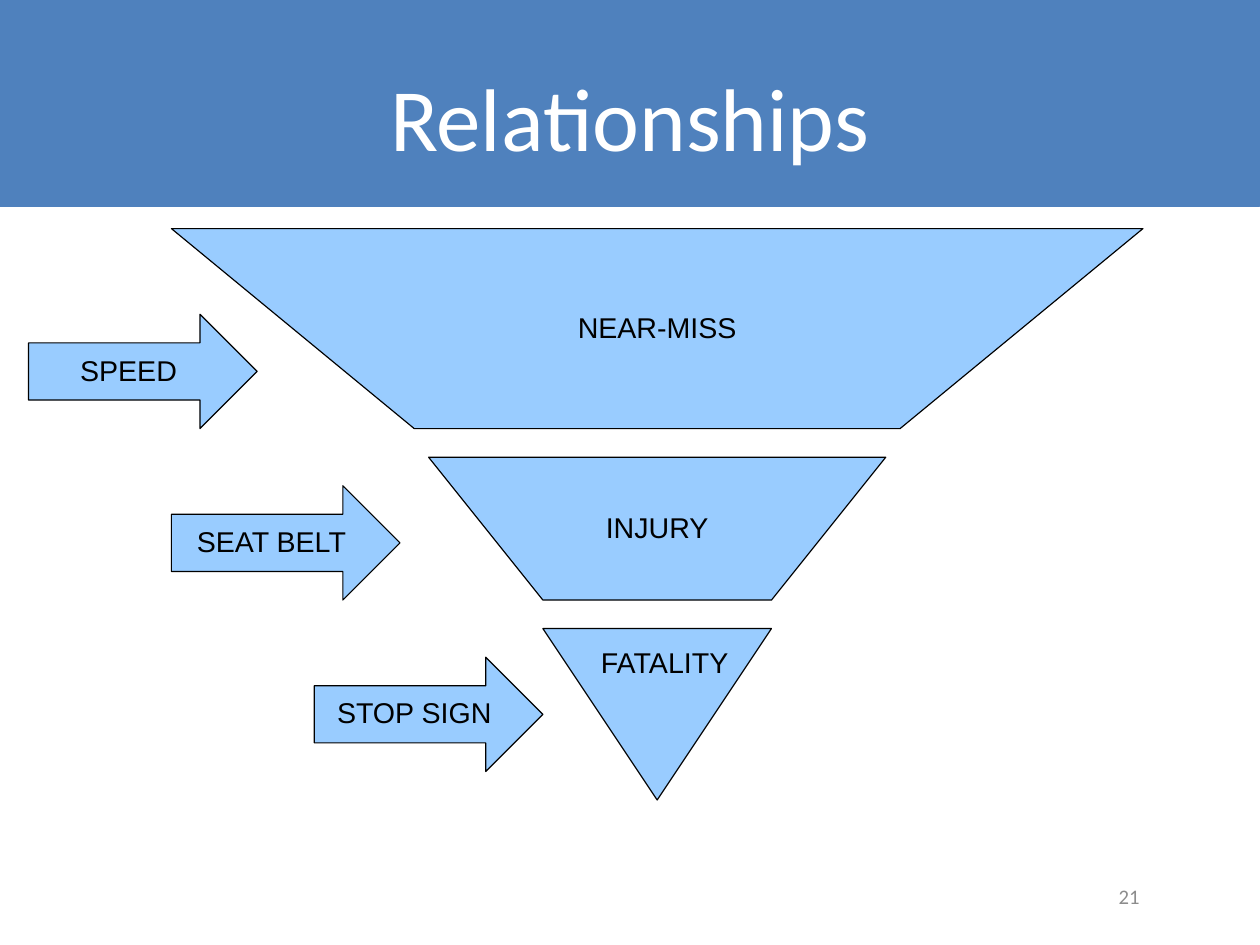
from pptx import Presentation
from pptx.dml.color import RGBColor
from pptx.enum.shapes import MSO_SHAPE
from pptx.enum.text import MSO_ANCHOR, MSO_AUTO_SIZE, PP_ALIGN
from pptx.util import Cm, Inches, Pt

BANNER_BLUE = RGBColor(0x4F, 0x81, 0xBD)
SKY_BLUE = RGBColor(0x99, 0xCC, 0xFF)
BLACK = RGBColor(0, 0, 0)
WHITE = RGBColor(0xFF, 0xFF, 0xFF)
GRAY = RGBColor(0x8C, 0x8C, 0x8C)

BANNER_WIDTH = 11.02
CENTER = 5.75
ARROWS = ["SPEED", "SEAT BELT", "STOP SIGN"]


def style_shape(shape, fill=SKY_BLUE, line=BLACK, weight=0.75):
    shape.shadow.inherit = False
    shape.fill.solid()
    shape.fill.fore_color.rgb = fill
    shape.line.color.rgb = line
    shape.line.width = Pt(weight)


def write_text(shape, text, size=18, font="Arial", color=BLACK,
               align=PP_ALIGN.CENTER, anchor=MSO_ANCHOR.MIDDLE,
               margins=(0.1, 0.05), wrap=False, spacing=0.93):
    frame = shape.text_frame
    frame.text = text
    frame.word_wrap = wrap
    frame.auto_size = MSO_AUTO_SIZE.NONE
    frame.vertical_anchor = anchor
    frame.margin_left = frame.margin_right = Inches(margins[0])
    frame.margin_top = frame.margin_bottom = Inches(margins[1])
    para = frame.paragraphs[0]
    para.alignment = align
    para.line_spacing = spacing
    para.font.size = Pt(size)
    para.font.name = font
    para.font.color.rgb = color


def add_preset(page, kind, left, top, width, height):
    return page.shapes.add_shape(
        kind, Inches(left), Inches(top), Inches(width), Inches(height))


def add_text(page, text, left, top, width, height, **style):
    box = page.shapes.add_textbox(
        Inches(left), Inches(top), Inches(width), Inches(height))
    write_text(box, text, wrap=True, **style)


def add_heading(page, text):
    title = page.shapes.title
    title.left, title.top = Inches(0), Inches(0.33)
    title.width, title.height = Inches(BANNER_WIDTH), Inches(1.37)
    write_text(title, text, size=56, font="Calibri", color=WHITE,
               margins=(0.11, 0.06), wrap=True, spacing=1.0)
    banner = add_preset(page, MSO_SHAPE.RECTANGLE, 0, 0, BANNER_WIDTH, 1.8)
    style_shape(banner, BANNER_BLUE, BANNER_BLUE, 2)
    title.element.addprevious(banner.element)


def add_arrow(page, text, left, top):
    arrow = add_preset(page, MSO_SHAPE.RIGHT_ARROW, left, top, 2, 1)
    style_shape(arrow)
    write_text(arrow, text)


def add_funnel_level(page, text, top, height, upper, lower):
    corners = [
        (CENTER - lower / 2, top + height),
        (CENTER + lower / 2, top + height),
        (CENTER + upper / 2, top),
    ]
    builder = page.shapes.build_freeform(
        Inches(CENTER - upper / 2), Inches(top))
    builder.add_line_segments([(Inches(x), Inches(y)) for x, y in corners])
    level = builder.convert_to_shape()
    style_shape(level)
    write_text(level, text)


def add_funnel_tip(page, text):
    tip = add_preset(
        page, MSO_SHAPE.ISOSCELES_TRIANGLE, CENTER - 1, 5.5, 2, 1.5)
    tip.element.spPr.xfrm.set("flipV", "1")
    style_shape(tip)
    add_text(page, text, 5.13, 5.62, 1.37, 0.38, anchor=MSO_ANCHOR.TOP)


def main():
    deck = Presentation()
    deck.slide_width, deck.slide_height = Cm(28), Cm(21)
    page = deck.slides.add_slide(deck.slide_layouts[5])
    add_heading(page, "Relationships")
    for index, label in enumerate(ARROWS):
        add_arrow(page, label, 0.25 + 1.25 * index, 2.75 + 1.5 * index)
    add_funnel_level(page, "NEAR-MISS", 2, 1.75, 8.5, 4.25)
    add_funnel_level(page, "INJURY", 4, 1.25, 4, 2)
    add_funnel_tip(page, "FATALITY")
    add_text(page, "21", 7.51, 7.63, 2.57, 0.44, size=13, font="Calibri",
             color=GRAY, align=PP_ALIGN.RIGHT, margins=(0.11, 0.06))
    deck.save("out.pptx")


if __name__ == "__main__":
    main()
